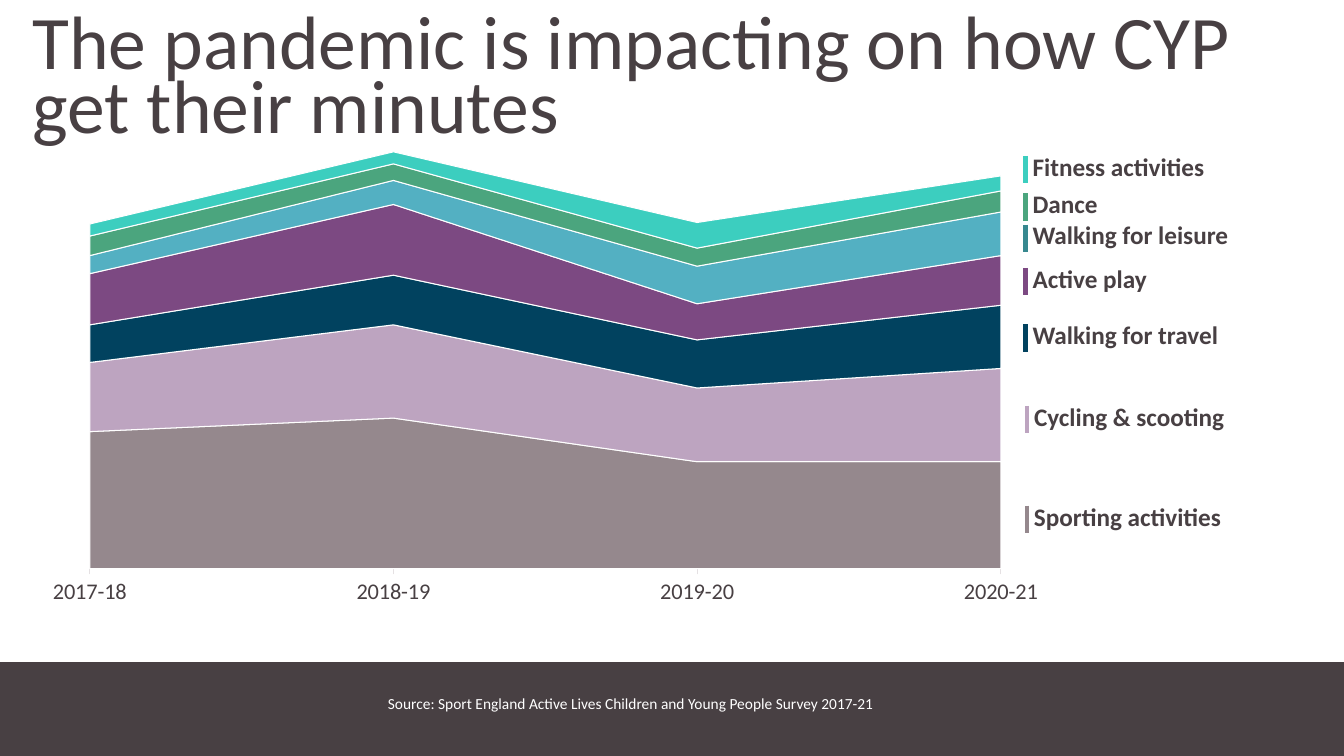
import pptx
import pptx.chart.data
import pptx.dml.color
import pptx.enum.chart
import pptx.enum.shapes
import pptx.util
from lxml import etree
from pptx.oxml import parse_xml
from pptx.oxml.ns import nsdecls, qn

Pt = pptx.util.Pt
FONT = "Calibri"
INK = {
    "dark": "484043",
    "white": "FFFFFF",
    "axis": "E5E1E3",
    "grey": "95888D",
    "lilac": "BDA4C0",
    "navy": "01425F",
    "plum": "7C4982",
    "sky": "53B0C2",
    "teal": "37888F",
    "green": "4BA57E",
    "mint": "3CCEBF",
}
YEARS = ["2017-18", "2018-19", "2019-20", "2020-21"]
# From the bottom band up: colour, minutes per year
BANDS = [
    ("grey", (91, 100, 71, 71)),
    ("lilac", (46, 62, 49, 62)),
    ("navy", (25, 33, 32, 42)),
    ("plum", (34, 47, 24, 33)),
    ("sky", (12, 16, 25, 29)),
    ("green", (13, 11, 12, 14)),
    ("mint", (8, 8, 17, 10)),
]
# Activity, colour of its mark, left, top, width
LABELS = [
    ("Sporting activities", "grey", 731.5, 354.2, 155.5),
    ("Walking for travel", "navy", 730.5, 224.6, 151),
    ("Walking for leisure", "teal", 730.5, 153.4, 159),
    ("Active play", "plum", 730.5, 184.3, 104.5),
    ("Cycling & scooting", "lilac", 731.5, 283, 159),
    ("Dance", "green", 730.5, 131, 63.5),
    ("Fitness activities", "mint", 730.5, 104.4, 151),
]
PLOT = {"x": 0.057, "y": 0.044, "w": 0.902, "h": 0.848}


def rgb(name):
    return pptx.dml.color.RGBColor.from_string(INK[name])


def style(font, size, ink, bold=False):
    font.name = FONT
    font.size = Pt(size)
    font.bold = bold
    font.color.rgb = rgb(ink)


def add_text(slide, text, area, size, ink="dark", bold=False, gap=None):
    box = slide.shapes.add_textbox(*map(Pt, area))
    frame = box.text_frame
    frame.word_wrap = True
    frame.text = text
    para = frame.paragraphs[0]
    para.line_spacing = gap
    style(para.runs[0].font, size, ink, bold)


def add_bar(slide, area, ink):
    bar = slide.shapes.add_shape(
        pptx.enum.shapes.MSO_SHAPE.RECTANGLE, *map(Pt, area))
    bar.shadow.inherit = False
    bar.fill.solid()
    bar.fill.fore_color.rgb = rgb(ink)
    bar.line.fill.background()


def add_mark(slide, left, top, ink):
    mark = slide.shapes.add_connector(
        pptx.enum.shapes.MSO_CONNECTOR.STRAIGHT,
        Pt(left), Pt(top), Pt(left), Pt(top + 19.6))
    mark.line.color.rgb = rgb(ink)
    mark.line.width = Pt(3)
    etree.SubElement(mark._element.spPr, qn("a:effectLst"))


def set_plot(chart):
    """Fix the inner plot area and start the bands on the axis edge."""
    area = chart._chartSpace.chart.plotArea
    for old in area.findall(qn("c:layout")):
        area.remove(old)
    sizes = "".join(f'<c:{key} val="{val}"/>' for key, val in PLOT.items())
    area.insert(0, parse_xml(
        f'<c:layout {nsdecls("c")}><c:manualLayout>'
        '<c:layoutTarget val="inner"/>'
        '<c:xMode val="edge"/><c:yMode val="edge"/>'
        f'{sizes}</c:manualLayout></c:layout>'))
    for cross in area.iter(qn("c:crossBetween")):
        cross.set("val", "midCat")


def add_areas(slide, area):
    data = pptx.chart.data.CategoryChartData()
    data.categories = YEARS
    for num, (ink, vals) in enumerate(BANDS, 1):
        data.add_series(f"Series {num}", vals)
    chart = slide.shapes.add_chart(
        pptx.enum.chart.XL_CHART_TYPE.AREA_STACKED,
        *map(Pt, area), data).chart
    chart.has_legend = False
    chart.has_title = False
    style(chart.font, 10, "dark")
    for band, (ink, vals) in zip(chart.plots[0].series, BANDS):
        band.format.fill.solid()
        band.format.fill.fore_color.rgb = rgb(ink)
        band.format.line.color.rgb = rgb("white")
        band.format.line.width = Pt(0.75)
    years = chart.category_axis
    years.has_major_gridlines = False
    years.major_tick_mark = pptx.enum.chart.XL_TICK_MARK.OUTSIDE
    years.format.line.color.rgb = rgb("axis")
    years.format.line.width = Pt(0.75)
    style(years.tick_labels.font, 16, "dark")
    total = chart.value_axis
    total.has_major_gridlines = False
    total.minimum_scale = 0
    total.maximum_scale = 288
    total.visible = False
    set_plot(chart)


def main():
    deck = pptx.Presentation()
    deck.slide_width = Pt(960)
    deck.slide_height = Pt(540)
    slide = deck.slides.add_slide(deck.slide_layouts[6])
    add_bar(slide, (0, 473, 960, 67), "dark")
    add_text(slide, "The pandemic is impacting on how CYP get their minutes",
             (16, 10, 929.5, 57), 54, gap=0.7)
    add_text(slide, "Source: Sport England Active Lives Children and Young "
             "People Survey 2017-21", (270, 494, 456.5, 24.5), 11, "white",
             gap=0.9)
    for text, ink, left, top, width in LABELS:
        add_text(slide, text, (left, top, width, 34.5), 18, bold=True)
        add_mark(slide, left + 2, top + 7, ink)
    add_areas(slide, (23, 80.6, 721.5, 365))
    deck.save("out.pptx")


if __name__ == "__main__":
    main()
